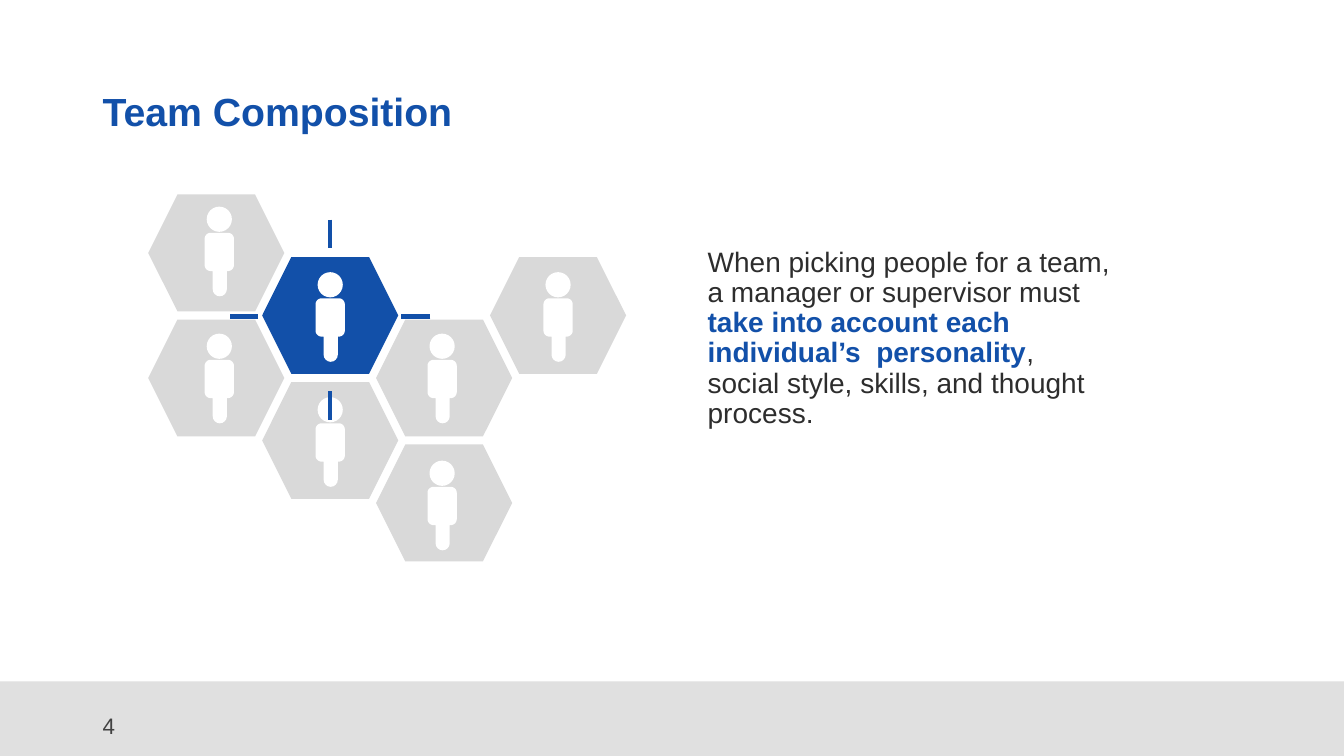
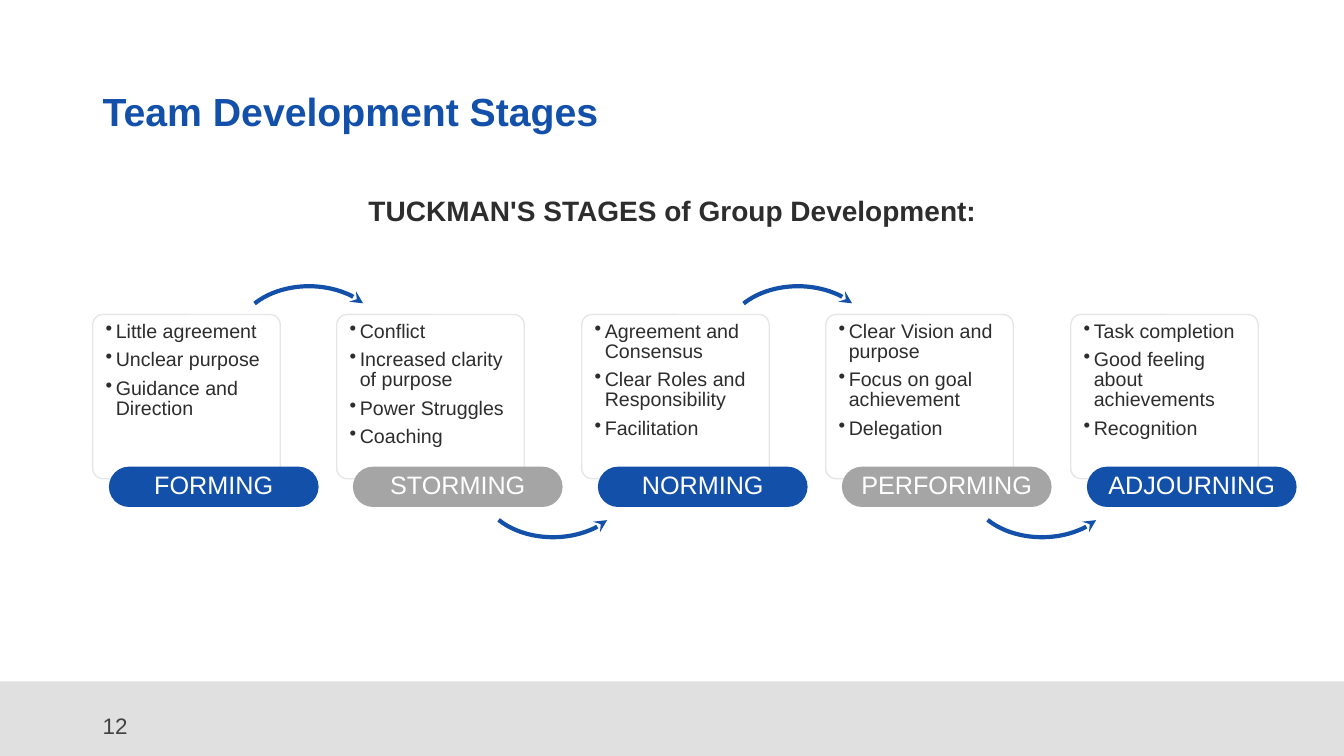
from math import cos, radians, sin

from pptx import Presentation
from pptx.dml.color import RGBColor
from pptx.enum.shapes import MSO_CONNECTOR as Connector, MSO_SHAPE as Preset
from pptx.enum.text import MSO_ANCHOR as Anchor, PP_ALIGN as Align
from pptx.oxml.ns import qn
from pptx.util import Pt

EMU_PER_PX = 9144
WIDTH, HEIGHT = 1333, 750
COLORS = {
    "blue": "1250A9",
    "band": "E0E0E0",
    "light": "D9D9D9",
    "gray": "A5A5A5",
    "outline": "E7E6E6",
    "ink": "2D2D2D",
    "number": "424242",
    "white": "FFFFFF",
}
TITLE_FONT = {"size": Pt(28), "bold": True, "color": "blue"}
NUMBER_FONT = {"size": Pt(16), "color": "number"}
BODY_FONT = {"size": Pt(20), "color": "ink"}
CARD_FONT = {"size": Pt(14), "color": "ink"}
PILL_FONT = {"size": Pt(18), "color": "white"}
TIGHT = {"line_spacing": 0.9}
CENTERED = {"line_spacing": 0.9, "alignment": Align.CENTER}
CARD_FORMAT = {"line_spacing": 0.85}
PILL_FORMAT = {"line_spacing": 0.85, "alignment": Align.CENTER}

# Body outline as arcs: center x, center y, radius, first and last angle
BODY_ARCS = [
    (6, 6, 6, 180, 270),
    (23, 6, 6, 270, 360),
    (23, 32, 6, 0, 90),
    (22, 38, 0, 0, 0),
    (15, 56, 7, 0, 180),
    (8, 38, 0, 0, 0),
    (6, 32, 6, 90, 180),
]
ARC_STEPS = 8


def px(*lengths):
    return [round(length * EMU_PER_PX) for length in lengths]


def rgb(name):
    return RGBColor.from_string(COLORS[name])


class Deck:
    def __init__(self):
        self.presentation = Presentation()
        size = px(WIDTH, HEIGHT)
        self.presentation.slide_width, self.presentation.slide_height = size
        self.slide = None

    def new_slide(self, title, number):
        layout = self.presentation.slide_layouts[6]
        self.slide = self.presentation.slides.add_slide(layout)
        self.shape(Preset.RECTANGLE, 0, 676, WIDTH, 74, fill="band")
        self.text_box(92, 40, 1150, 145, [title], TITLE_FONT, TIGHT, Anchor.MIDDLE)
        self.text_box(92, 700, 300, 40, [number], NUMBER_FONT, {}, Anchor.MIDDLE)

    def style(self, shape, fill=None, line=None, line_width=1):
        shape.shadow.inherit = False
        if fill:
            shape.fill.solid()
            shape.fill.fore_color.rgb = rgb(fill)
        else:
            shape.fill.background()
        if line:
            shape.line.color.rgb = rgb(line)
            shape.line.width = Pt(line_width)
        else:
            shape.line.fill.background()

    def shape(self, preset, left, top, width, height, adjustments=(), **look):
        shape = self.slide.shapes.add_shape(preset, *px(left, top, width, height))
        for index, value in enumerate(adjustments):
            shape.adjustments[index] = value
        self.style(shape, **look)
        return shape

    def fill_text(self, frame, paragraphs, font, layout, anchor=Anchor.TOP,
                  bullet=False):
        """Fill a frame; a paragraph is a string or a list of (text, font changes)."""
        frame.word_wrap = True
        frame.vertical_anchor = anchor
        for index, runs in enumerate(paragraphs):
            paragraph = frame.paragraphs[0] if index == 0 else frame.add_paragraph()
            paragraph.alignment = Align.LEFT
            if index:
                paragraph.space_before = Pt(6)
            for name, value in layout.items():
                setattr(paragraph, name, value)
            if bullet:
                self.add_bullet(paragraph)
            for text, changes in [(runs, {})] if isinstance(runs, str) else runs:
                run = paragraph.add_run()
                run.text = text
                values = {"name": "Arial", **font, **changes}
                run.font.color.rgb = rgb(values.pop("color"))
                for name, value in values.items():
                    setattr(run.font, name, value)

    def add_bullet(self, paragraph):
        properties = paragraph._p.get_or_add_pPr()
        indent = px(10)[0]
        properties.set("marL", str(indent))
        properties.set("indent", str(-indent))
        mark = properties.makeelement(qn("a:buChar"), {"char": "•"})
        properties.append(mark)

    def text_box(self, left, top, width, height, paragraphs, font, layout,
                 anchor=Anchor.TOP):
        box = self.slide.shapes.add_textbox(*px(left, top, width, height))
        self.fill_text(box.text_frame, paragraphs, font, layout, anchor)

    def line(self, *ends):
        line = self.slide.shapes.add_connector(Connector.STRAIGHT, *px(*ends))
        line.line.color.rgb = rgb("blue")
        line.line.width = Pt(3)
        properties = line._element.spPr
        properties.append(properties.makeelement(qn("a:effectLst"), {}))

    def person(self, left, top):
        """Draw a head at the given place and a body just under it."""
        self.shape(Preset.OVAL, left, top, 25, 25, fill="white")
        points = []
        for x, y, radius, first, last in BODY_ARCS:
            steps = ARC_STEPS if radius else 0
            for step in range(steps + 1):
                angle = radians(first + (last - first) * step / ARC_STEPS)
                points.append(px(left - 2 + x + radius * cos(angle),
                                 top + 26 + y + radius * sin(angle)))
        builder = self.slide.shapes.build_freeform(*points[0], scale=1.0)
        builder.add_line_segments(points[1:], close=True)
        self.style(builder.convert_to_shape(), fill="white")

    def curved_arrow(self, left, top, below=False):
        arc = self.shape(Preset.ARC, left, top, 143, 100, (126.776, 197.036),
                         line="blue", line_width=3)
        properties = arc._element.spPr
        outline = properties.find(qn("a:ln"))
        outline.append(outline.makeelement(qn("a:tailEnd"), {"type": "stealth"}))
        if below:
            properties.find(qn("a:xfrm")).set("flipV", "1")

    def stage(self, left, name, points, color):
        card = self.shape(Preset.ROUNDED_RECTANGLE, left, 312, 186, 163, (0.064,),
                          line="outline")
        self.fill_text(card.text_frame, points, CARD_FONT, CARD_FORMAT, bullet=True)
        pill = self.shape(Preset.ROUNDED_RECTANGLE, left + 16, 463, 208, 40, (0.5,),
                          fill=color)
        self.fill_text(pill.text_frame, [name], PILL_FONT, PILL_FORMAT, Anchor.MIDDLE)


def add_composition(deck):
    deck.new_slide("Team Composition", "4")
    strong = {"bold": True, "color": "blue"}
    deck.text_box(692, 241, 419, 235, [[
        ("When picking people for a team, a manager or supervisor must ", {}),
        ("take into account each individual’s  personality", strong),
        (", social style, skills, and thought process.", {}),
    ]], BODY_FONT, TIGHT)

    # Column and half row of each hexagon, then the place of its person's head
    members = [
        (0, 0, 205, 205),
        (1, 1, 315, 270),
        (0, 2, 205, 331),
        (1, 3, 315, 394),
        (2, 2, 426, 331),
        (2, 4, 426, 457),
        (3, 1, 541, 270),
    ]
    leader = (1, 1)
    for column, half_row, _, _ in members:
        color = "blue" if (column, half_row) == leader else "light"
        deck.shape(Preset.HEXAGON, 147 + 113 * column, 193 + 62 * half_row, 135, 116,
                   fill=color)
    for _, _, left, top in members:
        deck.person(left, top)
    for ends in [(327, 218, 327, 246), (327, 388, 327, 417),
                 (427, 314, 398, 314), (256, 314, 228, 314)]:
        deck.line(*ends)


def add_stages(deck):
    deck.new_slide("Team Development Stages", "12")
    deck.text_box(227, 191, 880, 81, ["TUCKMAN'S STAGES of Group Development:"],
                  {**BODY_FONT, "bold": True}, CENTERED)
    stages = [
        ("FORMING", ["Little agreement", "Unclear purpose", "Guidance and Direction"]),
        ("STORMING", ["Conflict", "Increased clarity of purpose", "Power Struggles",
                      "Coaching"]),
        ("NORMING", ["Agreement and Consensus", "Clear Roles and Responsibility",
                     "Facilitation"]),
        ("PERFORMING", ["Clear Vision and purpose", "Focus on goal achievement",
                        "Delegation"]),
        ("ADJOURNING", ["Task completion", "Good feeling about achievements",
                        "Recognition"]),
    ]
    lefts = [92 + 485 * index // 2 for index in range(len(stages))]
    for index, (name, points) in enumerate(stages):
        deck.stage(lefts[index], name, points, "gray" if index % 2 else "blue")
    for index, left in enumerate(lefts[:-1]):
        below = index % 2 == 1
        deck.curved_arrow(left + 143, 433 if below else 284, below)


def main():
    deck = Deck()
    add_composition(deck)
    add_stages(deck)
    deck.presentation.save("out.pptx")


if __name__ == "__main__":
    main()
